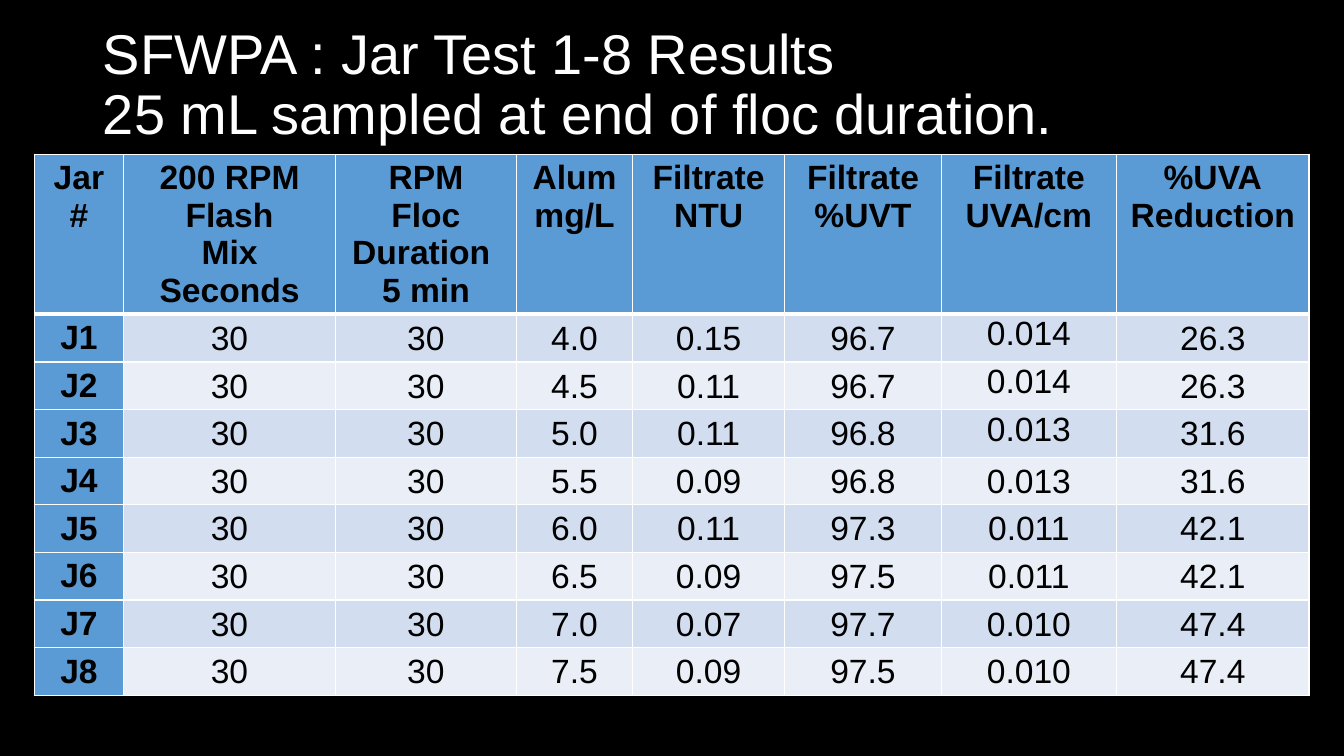
import pptx
import pptx.util
import pptx.dml.color
import pptx.enum.text
import pptx.oxml
import pptx.oxml.ns

Cm = pptx.util.Cm
Pt = pptx.util.Pt
ANCHOR = pptx.enum.text.MSO_ANCHOR
ALIGN = pptx.enum.text.PP_ALIGN

HEADLINE = "SFWPA : Jar Test 1-8 Results\v25 mL sampled at end of floc duration."
HEADINGS = [
    "Jar\n#",
    "200 RPM\nFlash\nMix\nSeconds",
    "RPM\nFloc\nDuration \n5 min",
    "Alum\nmg/L",
    "Filtrate\nNTU",
    "Filtrate\n%UVT",
    "Filtrate\nUVA/cm",
    "%UVA\nReduction",
]
JARS = [
    ("J1", "30", "30", "4.0", "0.15", "96.7", "0.014", "26.3"),
    ("J2", "30", "30", "4.5", "0.11", "96.7", "0.014", "26.3"),
    ("J3", "30", "30", "5.0", "0.11", "96.8", "0.013", "31.6"),
    ("J4", "30", "30", "5.5", "0.09", "96.8", "0.013", "31.6"),
    ("J5", "30", "30", "6.0", "0.11", "97.3", "0.011", "42.1"),
    ("J6", "30", "30", "6.5", "0.09", "97.5", "0.011", "42.1"),
    ("J7", "30", "30", "7.0", "0.07", "97.7", "0.010", "47.4"),
    ("J8", "30", "30", "7.5", "0.09", "97.5", "0.010", "47.4"),
]
COLUMN_WIDTHS = [2.26, 5.33, 4.57, 2.92, 3.84, 3.94, 4.42, 4.85]
HEADING_HEIGHT, JAR_HEIGHT = 4.03, 1.2
UVA_COLUMN, LAST_TOP_ROW = 6, 3
COLORS = {
    "background": "000000",
    "headline": "FFFFFF",
    "text": "000000",
    "border": "FFFFFF",
    "heading": "5B9BD5",
    "odd": "D2DEEF",
    "even": "EAEFF7",
}
HEADLINE_FRAME = {
    "word_wrap": True,
    "auto_size": pptx.enum.text.MSO_AUTO_SIZE.NONE,
    "vertical_anchor": ANCHOR.MIDDLE,
}
HEADLINE_BOX = {"left": Cm(2.34), "top": Cm(0.33), "width": Cm(29.21), "height": Cm(3.68)}
VALUE_MARGINS = {
    "margin_left": Cm(0.03),
    "margin_right": Cm(0.03),
    "margin_top": Cm(0.03),
    "margin_bottom": Cm(0),
}


def apply(target, values):
    for name, value in values.items():
        setattr(target, name, value)


def rgb(name):
    return pptx.dml.color.RGBColor.from_string(COLORS[name])


def format_text(frame, color, paragraph_format, font_format):
    for paragraph in frame.paragraphs:
        apply(paragraph, paragraph_format)
        for run in paragraph.runs:
            apply(run.font, {"name": "Arial", **font_format})
            run.font.color.rgb = rgb(color)


def add_borders(cell, row):
    weights = {"L": 1, "R": 1, "T": 3 if row == 1 else 1, "B": 3 if row == 0 else 1}
    properties = cell._tc.get_or_add_tcPr()
    for side, weight in weights.items():
        properties.append(pptx.oxml.parse_xml(
            f'<a:ln{side} {pptx.oxml.ns.nsdecls("a")} w="{Pt(weight)}"><a:solidFill>'
            f'<a:srgbClr val="{COLORS["border"]}"/></a:solidFill></a:ln{side}>'
        ))


def fill_cell(cell, row, column, content):
    is_heading = row == 0 or column == 0
    cell.text = content
    format_text(cell.text_frame, "text", {"alignment": ALIGN.CENTER},
                {"size": Pt(24), "bold": is_heading})
    if not is_heading:
        apply(cell, VALUE_MARGINS)
        at_top = column == UVA_COLUMN and row <= LAST_TOP_ROW
        cell.vertical_anchor = ANCHOR.TOP if at_top else ANCHOR.MIDDLE
    add_borders(cell, row)
    cell.fill.solid()
    cell.fill.fore_color.rgb = rgb("heading" if is_heading else "odd" if row % 2 else "even")


def main():
    deck = pptx.Presentation()
    apply(deck, {"slide_width": Cm(33.87), "slide_height": Cm(19.05)})
    slide = deck.slides.add_slide(deck.slide_layouts[5])
    slide.background.fill.solid()
    slide.background.fill.fore_color.rgb = rgb("background")

    headline = slide.shapes.title
    apply(headline, HEADLINE_BOX)
    apply(headline.text_frame, HEADLINE_FRAME)
    headline.text_frame.paragraphs[0].text = HEADLINE
    format_text(headline.text_frame, "headline",
                {"alignment": ALIGN.LEFT, "line_spacing": 0.9}, {"size": Pt(40)})

    rows = [HEADINGS, *JARS]
    heights = [HEADING_HEIGHT] + [JAR_HEIGHT] * len(JARS)
    results = slide.shapes.add_table(
        len(rows), len(HEADINGS), Cm(0.86), Cm(3.89),
        Cm(sum(COLUMN_WIDTHS)), Cm(sum(heights)),
    ).table
    for column, width in zip(results.columns, COLUMN_WIDTHS):
        column.width = Cm(width)
    for row, (contents, height) in enumerate(zip(rows, heights)):
        results.rows[row].height = Cm(height)
        for column, content in enumerate(contents):
            fill_cell(results.cell(row, column), row, column, content)

    deck.save("out.pptx")


if __name__ == "__main__":
    main()
